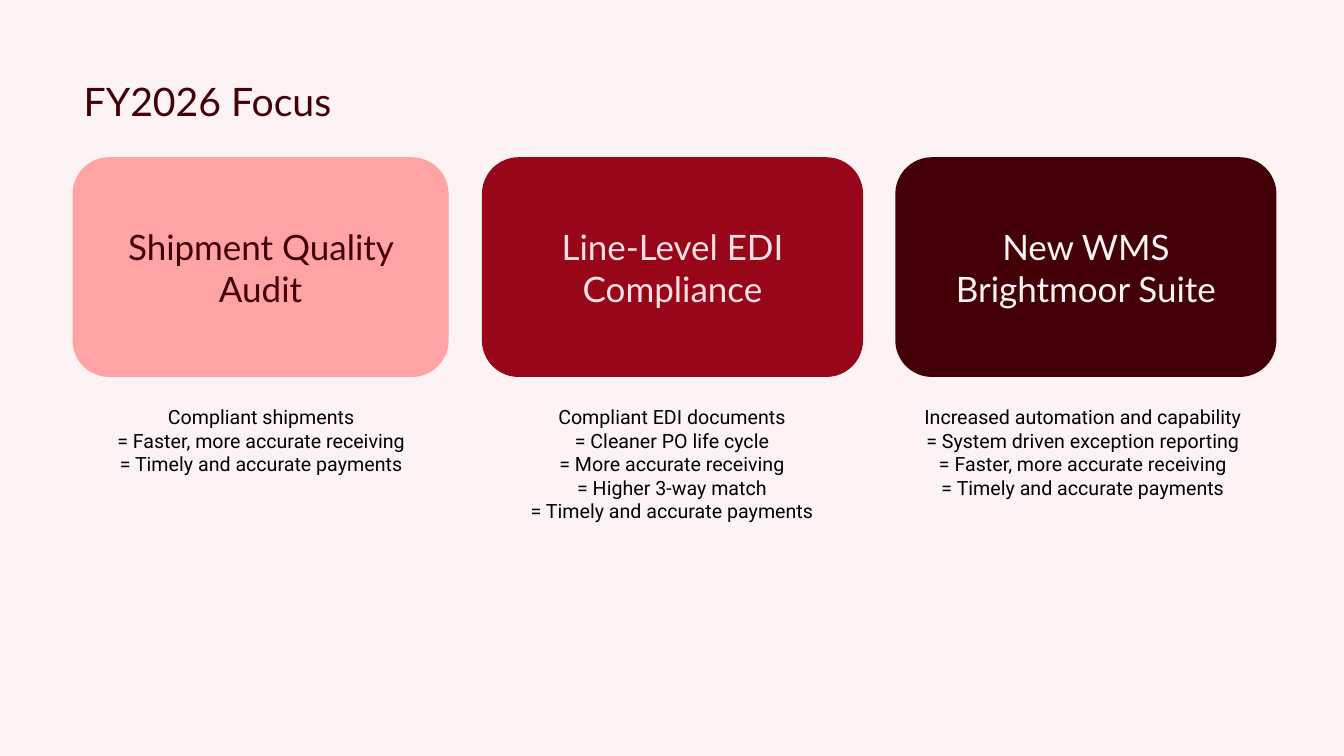
"""Build the FY2026 Focus slide."""
from pptx import Presentation
from pptx.dml.color import RGBColor
from pptx.enum.shapes import MSO_SHAPE
from pptx.enum.text import MSO_ANCHOR, PP_ALIGN
from pptx.util import Inches, Pt

ROUND = MSO_SHAPE.ROUNDED_RECTANGLE
MIDDLE, TOP = MSO_ANCHOR.MIDDLE, MSO_ANCHOR.TOP
LEFT, CENTER = PP_ALIGN.LEFT, PP_ALIGN.CENTER

BLUSH = RGBColor(0xFD, 0xF3, 0xF4)
PINK = RGBColor(0xFF, 0xA3, 0xA5)
ROSE = RGBColor(0xFF, 0xE0, 0xE3)
RED = RGBColor(0x97, 0x06, 0x19)
WINE = RGBColor(0x43, 0x00, 0x07)
BLACK = RGBColor(0x00, 0x00, 0x00)

CARDS = [
    (0.72, 3.73, PINK, WINE, ["Shipment Quality Audit"],
     ["Compliant shipments",
      "= Faster, more accurate receiving",
      "= Timely and accurate payments"]),
    (4.78, 3.78, RED, ROSE, ["Line-Level EDI Compliance"],
     ["Compliant EDI documents",
      "= Cleaner PO life cycle",
      "= More accurate receiving",
      "= Higher 3-way match",
      "= Timely and accurate payments"]),
    (8.88, 3.78, WINE, BLUSH, ["New WMS", "Brightmoor Suite"],
     ["Increased automation and capability",
      "= System driven exception reporting",
      "= Faster, more accurate receiving",
      "= Timely and accurate payments"]),
]
NOTE_SPANS = [(0.73, 3.72), (4.77, 3.79), (8.88, 3.72)]


def write(shape, lines, font, size, color, align=CENTER, anchor=MIDDLE):
    """Fill a shape with lines of text in one style."""
    frame = shape.text_frame
    frame.word_wrap = True
    frame.vertical_anchor = anchor
    frame.text = "\n".join(lines)
    for para in frame.paragraphs:
        para.alignment = align
        para.font.name = font
        para.font.size = Pt(size)
        para.font.color.rgb = color


def add_title(slide, text):
    """Place and format the slide title."""
    title = slide.shapes.title
    title.left, title.top = Inches(0.73), Inches(0.21)
    title.width, title.height = Inches(9.22), Inches(1.58)
    write(title, [text], "Lato", 28, WINE, LEFT)


def add_card(slide, left, width, fill, color, lines):
    """Add a rounded card with a heading."""
    card = slide.shapes.add_shape(
        ROUND, Inches(left), Inches(1.56), Inches(width), Inches(2.18))
    card.shadow.inherit = False
    card.fill.solid()
    card.fill.fore_color.rgb = fill
    card.line.fill.background()
    write(card, lines, "Lato", 25, color)


def add_note(slide, left, width, lines):
    """Add the benefits listed below a card."""
    height = 0.1 + 0.235 * len(lines)
    note = slide.shapes.add_textbox(
        Inches(left), Inches(3.97), Inches(width), Inches(height))
    write(note, lines, "Roboto", 14, BLACK, anchor=TOP)


def main():
    """Build and save the slide."""
    deck = Presentation()
    deck.slide_width, deck.slide_height = Inches(13.33), Inches(7.5)
    slide = deck.slides.add_slide(deck.slide_layouts[5])
    slide.background.fill.solid()
    slide.background.fill.fore_color.rgb = BLUSH
    add_title(slide, "FY2026 Focus")
    for card, span in zip(CARDS, NOTE_SPANS):
        *style, lines = card
        add_card(slide, *style)
        add_note(slide, *span, lines)
    deck.save("out.pptx")


if __name__ == "__main__":
    main()
